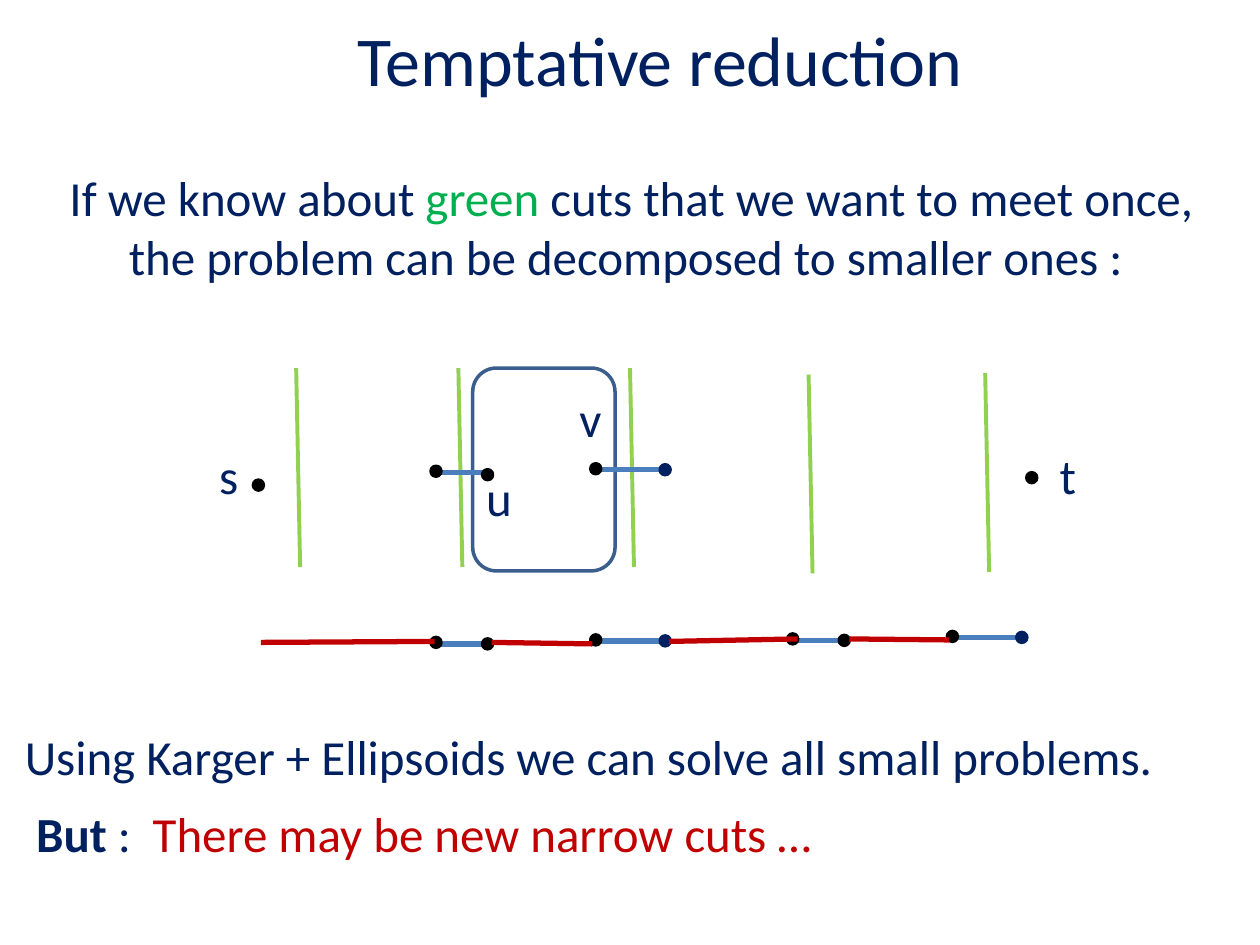
from dataclasses import dataclass

from lxml import etree
from pptx import Presentation
from pptx.dml.color import RGBColor
from pptx.enum.shapes import MSO_CONNECTOR, MSO_SHAPE
from pptx.enum.text import MSO_ANCHOR, MSO_AUTO_SIZE, PP_ALIGN
from pptx.oxml.ns import qn
from pptx.slide import Slide
from pptx.util import Cm, Pt

LINE = MSO_CONNECTOR.STRAIGHT
OVAL, ROUND = MSO_SHAPE.OVAL, MSO_SHAPE.ROUNDED_RECTANGLE
LEFT, CENTER = PP_ALIGN.LEFT, PP_ALIGN.CENTER
TOP, MIDDLE = MSO_ANCHOR.TOP, MSO_ANCHOR.MIDDLE
GROW = MSO_AUTO_SIZE.SHAPE_TO_FIT_TEXT

NAVY, GREEN, RED, BLACK = "002060", "00B050", "C00000", "000000"
LIME, BLUE, STEEL = "92D050", "4B7EBC", "3A5F8C"


def color(code):
    return RGBColor.from_string(code)


def write(para, text, size=28, tint=NAVY, bold=False, font="Calibri"):
    run = para.add_run()
    run.text = text
    run.font.name, run.font.size, run.font.bold = font, Pt(size), bold
    run.font.color.rgb = color(tint)


@dataclass
class Sketch:
    """Holds the slide and the style of its cut diagram."""

    slide: Slide
    dot_size: float = 0.2
    edge: float = 2

    def text(self, box, *lines, align=LEFT, anchor=TOP, wrap=True, **style):
        frame = self.slide.shapes.add_textbox(*map(Cm, box)).text_frame
        frame.word_wrap, frame.vertical_anchor = wrap, anchor
        if anchor == TOP:
            frame.auto_size = GROW
        for i, runs in enumerate(lines):
            para = frame.add_paragraph() if i else frame.paragraphs[0]
            para.alignment = align
            for words, form in runs:
                write(para, words, **{**style, **form})
        return frame

    def line(self, start, end, tint, width):
        link = self.slide.shapes.add_connector(LINE, *map(Cm, start + end))
        link.line.color.rgb, link.line.width = color(tint), Pt(width)
        etree.SubElement(link._element.spPr, qn("a:effectLst"))

    def shape(self, kind, box, tint, fill=None):
        item = self.slide.shapes.add_shape(kind, *map(Cm, box))
        item.shadow.inherit = False
        item.line.color.rgb, item.line.width = color(tint), Pt(self.edge)
        if fill:
            item.fill.solid()
            item.fill.fore_color.rgb = color(fill)
        else:
            item.fill.background()

    def dot(self, x, y, tint=BLACK):
        self.shape(OVAL, (x, y, self.dot_size, self.dot_size), tint, tint)

    def edges(self, x, y, drop):
        for left, right, down in ((0.02, 1.22, 0.13), (3.4, 4.62, 0.07)):
            self.line((x + right, y + down), (x + left, y + down), BLUE, 3)
        self.dot(x + 4.62, y - 0.03, NAVY)
        for dx, dy in ((3.22, -0.05), (1.04, drop), (0, 0)):
            self.dot(x + dx, y + dy)


def indent(para, margin, first):
    props = para._p.get_or_add_pPr()
    props.set("marL", str(Cm(margin)))
    props.set("indent", str(Cm(first - margin)))


def main():
    deck = Presentation()
    deck.slide_width, deck.slide_height = Cm(25.4), Cm(19.05)
    art = Sketch(deck.slides.add_slide(deck.slide_layouts[6]))

    art.text((1.88, -0.41, 22.86, 3.18), [("Temptative reduction", {})],
             align=CENTER, anchor=MIDDLE, size=40)

    art.shape(ROUND, (9.53, 7.42, 2.87, 4.09), STEEL)
    cuts = ((6.05, 11.43), (9.32, 11.43), (12.78, 11.43),
            (16.38, 11.56), (19.94, 11.53))
    for x, y in cuts:
        art.line((x, y), (x - 0.08, y - 4.01), LIME, 2.25)

    names = (("s", 4.17, 8.86, 0.94), ("t", 21.11, 8.86, 0.84),
             ("u", 9.55, 9.3, 1.04), ("v", 11.43, 7.7, 0.97))
    for name, x, y, width in names:
        art.text((x, y, width, 1.45), [(name, {})], wrap=False)

    art.dot(5.11, 9.68)
    art.dot(20.7, 9.53)
    for x, y, drop in ((8.69, 9.4, 0.07), (8.69, 12.85, 0.03),
                       (15.88, 12.78, 0.03)):
        art.edges(x, y, drop)

    paths = (((11.94, 12.98), (9.91, 12.95)), ((8.76, 12.93), (5.26, 12.95)),
             ((19.13, 12.9), (17.12, 12.88)), ((16.08, 12.88), (13.49, 12.93)))
    for start, end in paths:
        art.line(start, end, RED, 3)

    art.text((0.38, 3.25, 24.69, 2.64),
             [("If we know about ", {}), ("green ", {"tint": GREEN}),
              ("cuts that we want to meet once,", {})],
             [("the problem can be decomposed to smaller ones : ", {})],
             align=CENTER)

    notes = art.text(
        (0.03, 14.53, 25.1, 3),
        [("Using Karger + Ellipsoids we can solve all small problems.", {})],
        [("But ", {"bold": True}), (":\t", {}),
         ("There may be new narrow cuts …", {"tint": RED})])
    first, last = notes.paragraphs
    indent(first, 0.22, 0.22)
    indent(last, 2.8, 0.45)
    last.space_before = Pt(10)

    deck.save("out.pptx")


if __name__ == "__main__":
    main()
